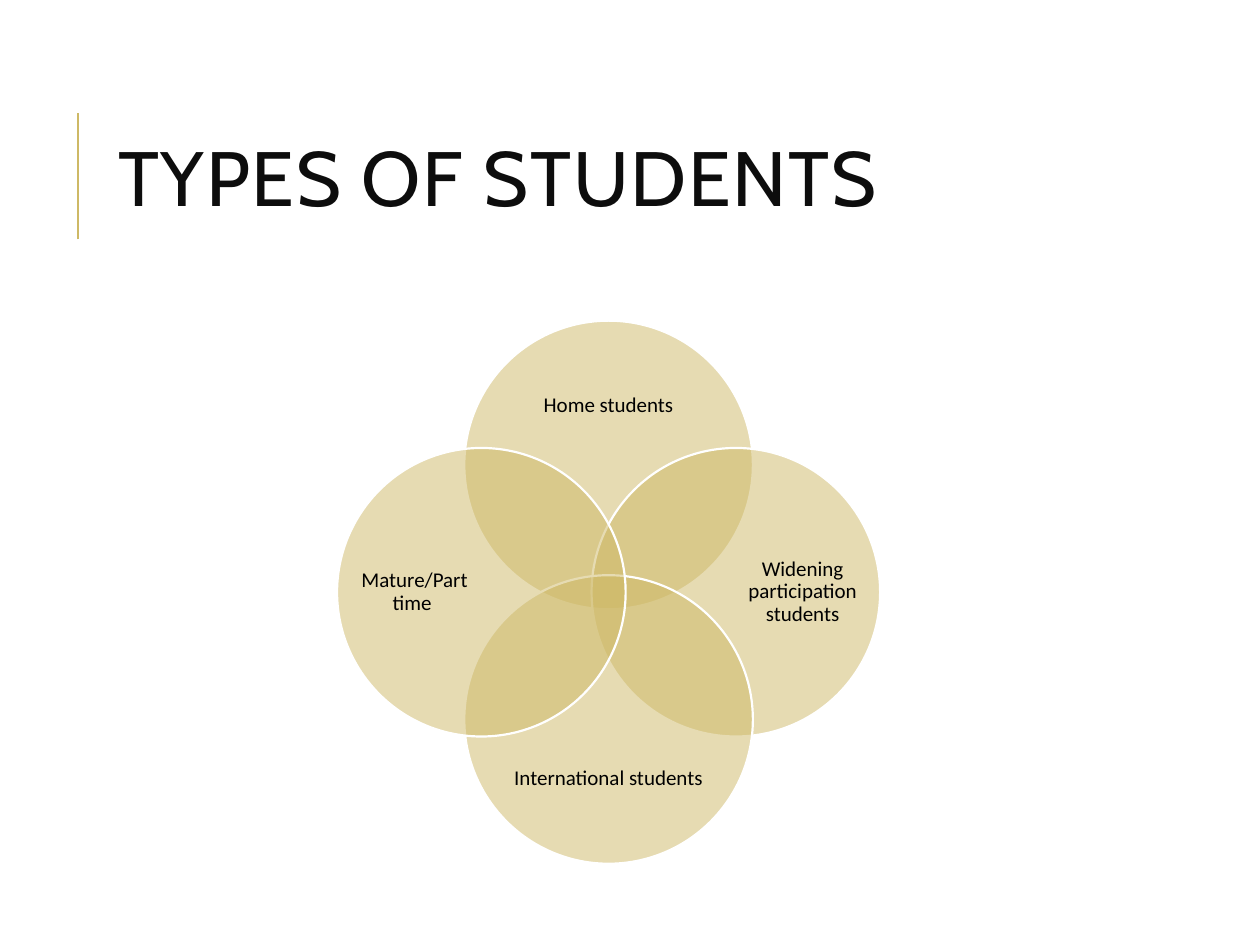
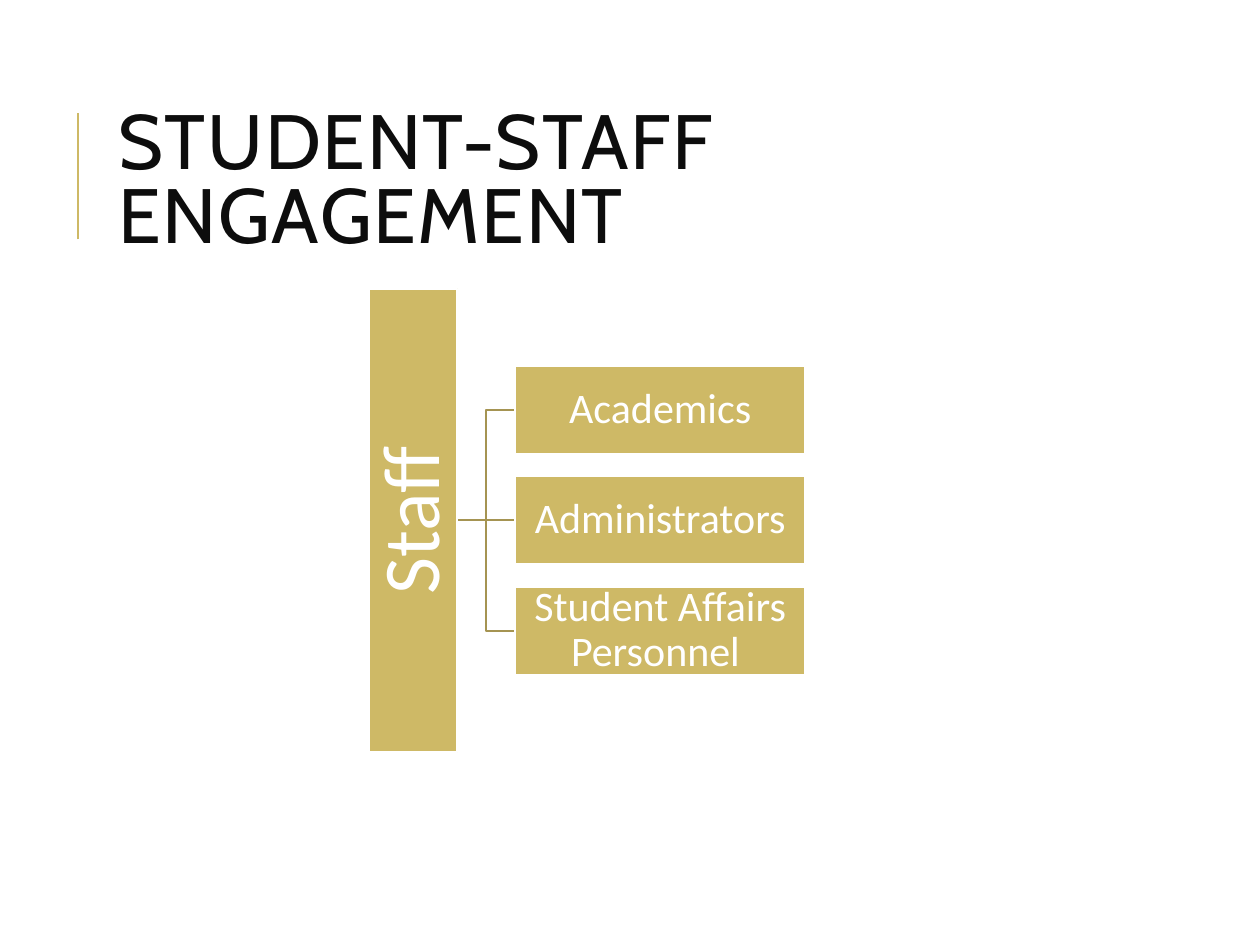
from dataclasses import dataclass

from lxml import etree
from pptx import Presentation
from pptx.dml.color import RGBColor
from pptx.enum.shapes import MSO_CONNECTOR, MSO_SHAPE
from pptx.enum.text import MSO_ANCHOR, PP_ALIGN
from pptx.oxml.ns import qn
from pptx.util import Inches, Pt

GOLD = RGBColor(0xCE, 0xB9, 0x66)
DARK_GOLD = RGBColor(0xA5, 0x94, 0x52)
INK = RGBColor(0x0D, 0x0D, 0x0D)
BLACK = RGBColor(0x00, 0x00, 0x00)
WHITE = RGBColor(0xFF, 0xFF, 0xFF)
TITLE_FONT, BODY_FONT = "Cabin", "Calibri"
OUTLINE = 1.25

# Overlapping circles
VENN_X, VENN_Y = 4.83, 4.7
DIAMETER, CIRCLE_OFFSET = 2.29, 1.01

# Staff hierarchy
ROOT_X, CHILD_X, MIDDLE_Y = 3.28, 5.24, 4.13
ROOT_LENGTH, CHILD_WIDTH, BOX_HEIGHT, ROW_STEP = 3.68, 2.3, 0.7, 0.875


@dataclass(frozen=True)
class StudentGroup:
    label: str
    dx: int
    dy: int
    label_offset: float
    label_width: float
    label_height: float


STUDENT_GROUPS = [
    StudentGroup("Home students", 0, -1, 1.48, 1.76, 0.73),
    StudentGroup("Widening participation students", 1, 0, 1.54, 0.88, 1.76),
    StudentGroup("International students", 0, 1, 1.48, 1.76, 0.73),
    StudentGroup("Mature/Part time ", -1, 0, 1.54, 0.88, 1.76),
]
STAFF_GROUPS = ["Academics", "Administrators", "Student Affairs Personnel "]


def centred(x: float, y: float, width: float, height: float) -> tuple:
    """Left, top, width and height of a box around a centre."""
    return (Inches(x - width / 2), Inches(y - height / 2),
            Inches(width), Inches(height))


def write(shape, text: str, font: str, size: float, color: RGBColor,
          spacing: float = 0.9, align=PP_ALIGN.CENTER, inset: float = 0):
    frame = shape.text_frame
    frame.word_wrap = True
    frame.vertical_anchor = MSO_ANCHOR.MIDDLE
    frame.margin_left = frame.margin_right = Inches(inset)
    frame.margin_top = frame.margin_bottom = Inches(inset)
    paragraph = frame.paragraphs[0]
    paragraph.text = text
    paragraph.alignment = align
    paragraph.line_spacing = spacing
    paragraph.font.name = font
    paragraph.font.size = Pt(size)
    paragraph.font.color.rgb = color
    return paragraph


def add_line(slide, start: tuple, end: tuple, color: RGBColor, width: float,
             kind=MSO_CONNECTOR.STRAIGHT) -> None:
    line = slide.shapes.add_connector(
        kind, *(Inches(value) for value in (*start, *end)))
    line.line.color.rgb = color
    line.line.width = Pt(width)
    etree.SubElement(line._element.spPr, qn("a:effectLst"))


def add_gold_shape(slide, preset, box: tuple):
    shape = slide.shapes.add_shape(preset, *box)
    shape.shadow.inherit = False
    shape.fill.solid()
    shape.fill.fore_color.rgb = GOLD
    shape.line.color.rgb = WHITE
    shape.line.width = Pt(OUTLINE)
    return shape


def add_titled_slide(deck, title: str):
    slide = deck.slides.add_slide(deck.slide_layouts[6])
    add_line(slide, (0.62, 1.9), (0.62, 0.9), GOLD, 1.5)
    title_box = slide.shapes.add_textbox(
        Inches(0.84), Inches(0.64), Inches(7.97), Inches(1.64))
    paragraph = write(title_box, title, TITLE_FONT, 44, INK, 0.8,
                      PP_ALIGN.LEFT, 0.1)
    # Letter spacing of one point
    paragraph.runs[0].font._element.set("spc", "100")
    return slide


def add_student_circle(slide, group: StudentGroup) -> None:
    circle = add_gold_shape(slide, MSO_SHAPE.OVAL, centred(
        VENN_X + group.dx * CIRCLE_OFFSET, VENN_Y + group.dy * CIRCLE_OFFSET,
        DIAMETER, DIAMETER))
    # Half-transparent fill
    tint = circle._element.spPr.find(qn("a:solidFill"))[0]
    etree.SubElement(tint, qn("a:alpha"), val="50000")
    label = slide.shapes.add_textbox(*centred(
        VENN_X + group.dx * group.label_offset,
        VENN_Y + group.dy * group.label_offset,
        group.label_width, group.label_height))
    write(label, group.label, BODY_FONT, 12, BLACK)


def add_staff_tree(slide) -> None:
    rows = [MIDDLE_Y + (i - 1) * ROW_STEP for i in range(len(STAFF_GROUPS))]
    trunk = (ROOT_X + BOX_HEIGHT / 2, MIDDLE_Y)
    # Branches lie behind the boxes
    for y in rows:
        kind = MSO_CONNECTOR.STRAIGHT if y == MIDDLE_Y else MSO_CONNECTOR.ELBOW
        add_line(slide, trunk, (CHILD_X - CHILD_WIDTH / 2, y),
                 DARK_GOLD, OUTLINE, kind)

    root = add_gold_shape(slide, MSO_SHAPE.RECTANGLE, centred(
        ROOT_X, MIDDLE_Y, ROOT_LENGTH, BOX_HEIGHT))
    root.rotation = 270
    write(root, "Staff", BODY_FONT, 46, WHITE, inset=0.03)

    for staff_group, y in zip(STAFF_GROUPS, rows):
        child = add_gold_shape(slide, MSO_SHAPE.RECTANGLE, centred(
            CHILD_X, y, CHILD_WIDTH, BOX_HEIGHT))
        write(child, staff_group, BODY_FONT, 24, WHITE, inset=0.02)


def main() -> None:
    deck = Presentation()
    deck.slide_width, deck.slide_height = Inches(10), Inches(7.5)

    # Types of students
    students = add_titled_slide(deck, "TYPES OF STUDENTS")
    for group in STUDENT_GROUPS:
        add_student_circle(students, group)

    # Staff engagement
    add_staff_tree(add_titled_slide(deck, "STUDENT-STAFF ENGAGEMENT"))

    deck.save("out.pptx")


if __name__ == "__main__":
    main()
